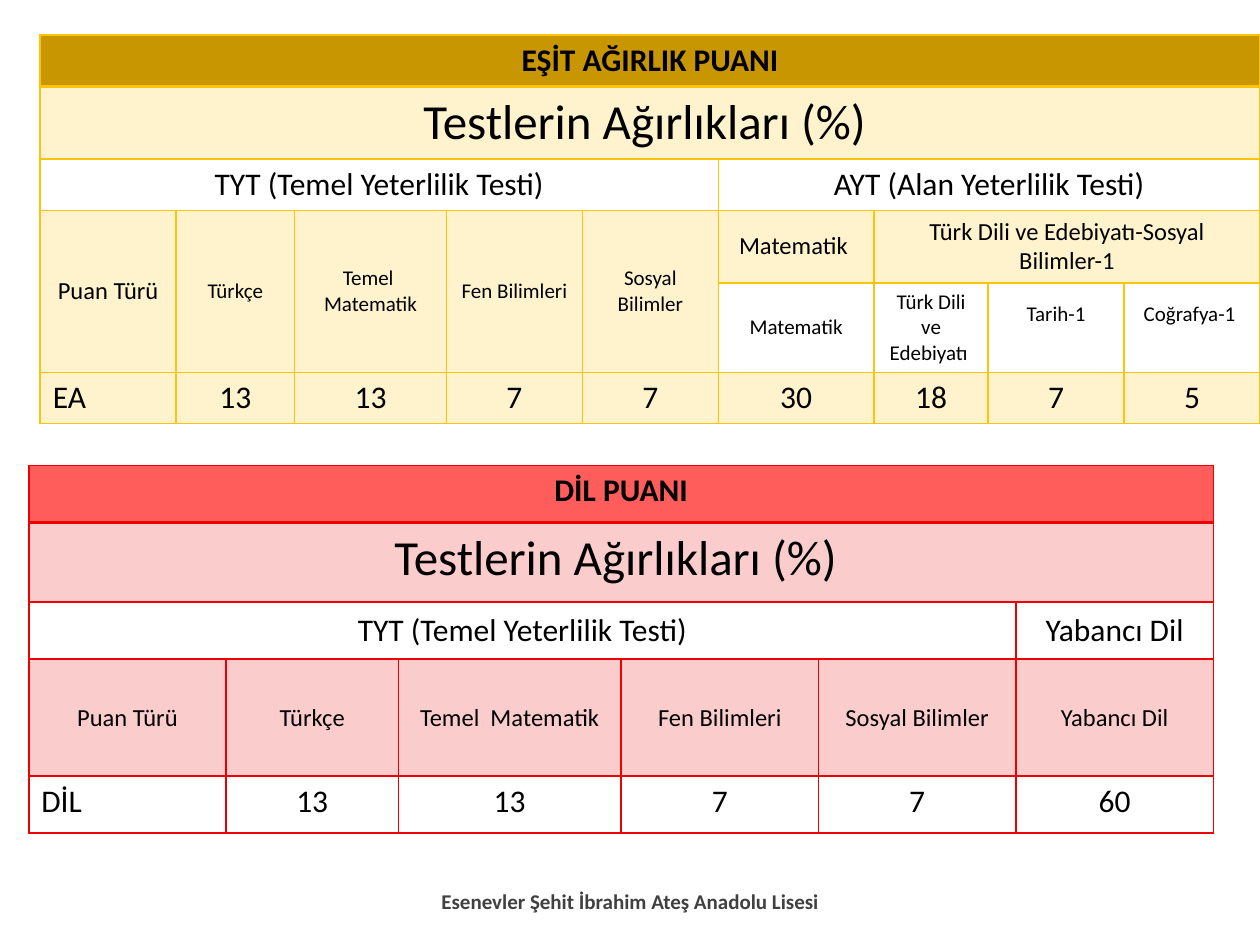
import dataclasses
import typing

import lxml.etree
import pptx
import pptx.dml.color
import pptx.enum.text
import pptx.oxml.ns
import pptx.util

Cm = pptx.util.Cm
Align = pptx.enum.text.PP_ALIGN
Anchor = pptx.enum.text.MSO_ANCHOR


@dataclasses.dataclass(frozen=True)
class Theme:
    font: str = "Calibri"
    text: str = "000000"
    footer: str = "404040"
    gold: str = "FFC30B"
    gold_dark: str = "C89600"
    red: str = "EF0000"
    red_light: str = "FF5C5C"
    tint_percent: int = 20
    title_size: int = 28
    heading_size: int = 18
    label_size: int = 14
    small_size: int = 12
    line: int = 1
    header_line: int = 2


THEME = Theme()


@dataclasses.dataclass(frozen=True)
class CellSpec:
    row: int
    column: int
    text: str
    size: int
    tinted: bool = False
    rows: int = 1
    columns: int = 1
    anchor: typing.Any = Anchor.MIDDLE
    align: typing.Any = Align.CENTER
    bold: bool = False
    bottom_margin: float = 0.13


@dataclasses.dataclass(frozen=True)
class ScoreTable:
    left: float
    top: float
    widths: list[float]
    heights: list[float]
    header_color: str
    accent: str
    cells: list[CellSpec]


def title_cells(title: str, columns: int) -> list[CellSpec]:
    """The header, the subtitle and the first test group, shared by both tables."""
    return [
        CellSpec(0, 0, title, THEME.heading_size, columns=columns, anchor=Anchor.TOP, bold=True),
        CellSpec(1, 0, "Testlerin Ağırlıkları (%) ", THEME.title_size, True,
                 columns=columns, anchor=Anchor.TOP),
        CellSpec(2, 0, "TYT (Temel Yeterlilik Testi)", THEME.heading_size, columns=5),
    ]


def score_cells(row: int, values: list[str], tinted: bool) -> list[CellSpec]:
    return [
        CellSpec(row, column, value, THEME.heading_size, tinted, anchor=Anchor.TOP,
                 align=Align.CENTER if column else Align.LEFT)
        for column, value in enumerate(values)
    ]


def format_text(text_frame: typing.Any, size: int, color: str, bold: bool, align: typing.Any) -> None:
    paragraph = text_frame.paragraphs[0]
    paragraph.alignment = align
    for run in paragraph.runs:
        run.font.name = THEME.font
        run.font.size = pptx.util.Pt(size)
        run.font.bold = bold
        run.font.color.rgb = pptx.dml.color.RGBColor.from_string(color)


def fill_cell(cell: typing.Any, color: str, percent: int = 100) -> None:
    cell.fill.solid()
    cell.fill.fore_color.rgb = pptx.dml.color.RGBColor.from_string(color)
    if percent < 100:
        solid = cell._tc.tcPr.find(pptx.oxml.ns.qn("a:solidFill"))
        lxml.etree.SubElement(solid[0], pptx.oxml.ns.qn("a:alpha"), val=str(percent * 1000))


def set_borders(cell: typing.Any, color: str, row: int) -> None:
    """Draw all four sides; the edge below the header row is heavier."""
    properties = cell._tc.get_or_add_tcPr()
    heavy_side = {0: "lnB", 1: "lnT"}.get(row)
    for position, side in enumerate(("lnL", "lnR", "lnT", "lnB")):
        width = THEME.header_line if side == heavy_side else THEME.line
        line = lxml.etree.Element(pptx.oxml.ns.qn("a:" + side), w=str(pptx.util.Pt(width)))
        solid = lxml.etree.SubElement(line, pptx.oxml.ns.qn("a:solidFill"))
        lxml.etree.SubElement(solid, pptx.oxml.ns.qn("a:srgbClr"), val=color)
        properties.insert(position, line)


def draw_table(slide: typing.Any, spec: ScoreTable) -> None:
    shape = slide.shapes.add_table(
        len(spec.heights), len(spec.widths), Cm(spec.left), Cm(spec.top),
        Cm(sum(spec.widths)), Cm(sum(spec.heights)))
    table = shape.table
    table.first_row = table.horz_banding = False
    for column, width in zip(table.columns, spec.widths):
        column.width = Cm(width)
    for row, height in zip(table.rows, spec.heights):
        row.height = Cm(height)

    # Plain grid, including the cells hidden by merges
    for row_index in range(len(spec.heights)):
        for column_index in range(len(spec.widths)):
            cell = table.cell(row_index, column_index)
            cell.fill.background()
            set_borders(cell, spec.accent, row_index)

    # Contents
    for item in spec.cells:
        cell = table.cell(item.row, item.column)
        if item.rows * item.columns > 1:
            cell.merge(table.cell(item.row + item.rows - 1, item.column + item.columns - 1))
        if item.row == 0:
            fill_cell(cell, spec.header_color)
        elif item.tinted:
            fill_cell(cell, spec.accent, THEME.tint_percent)
        cell.vertical_anchor = item.anchor
        cell.margin_bottom = Cm(item.bottom_margin)
        cell.text_frame.text = item.text
        format_text(cell.text_frame, item.size, THEME.text, item.bold, item.align)


def draw_footer(slide: typing.Any, text: str) -> None:
    box = slide.shapes.add_textbox(Cm(8.41), Cm(17.65), Cm(8.59), Cm(1.02))
    box.text_frame.word_wrap = True
    box.text_frame.vertical_anchor = Anchor.MIDDLE
    box.text_frame.text = text
    format_text(box.text_frame, THEME.small_size, THEME.footer, True, Align.CENTER)


SUBJECTS = ["Puan Türü", "Türkçe", "Temel  Matematik", "Fen Bilimleri", "Sosyal Bilimler"]

LANGUAGE = ScoreTable(
    0.58, 9.38, [3.98, 3.47, 4.49, 3.98, 3.98, 3.98], [1.15, 1.61, 1.15, 2.36, 1.15],
    THEME.red_light, THEME.red,
    title_cells("DİL PUANI", 6)
    + [CellSpec(2, 5, "Yabancı Dil", THEME.heading_size)]
    + [CellSpec(3, column, subject, THEME.label_size, True)
       for column, subject in enumerate(SUBJECTS + ["Yabancı Dil"])]
    + score_cells(4, ["DİL", "13", "13", "7", "7", "60"], False))

EQUAL_WEIGHT = ScoreTable(
    0.81, 0.71, [2.74, 2.39, 3.06, 2.74, 2.74, 3.14, 2.3, 2.74, 2.74],
    [1.03, 1.45, 1.03, 1.45, 1.8, 1.03],
    THEME.gold_dark, THEME.gold,
    title_cells("EŞİT AĞIRLIK PUANI", 9)
    + [CellSpec(2, 5, "AYT (Alan Yeterlilik Testi)", THEME.heading_size, columns=4)]
    + [CellSpec(3, column, subject, THEME.small_size if column else THEME.label_size, True, rows=2)
       for column, subject in enumerate(SUBJECTS)]
    + [
        CellSpec(3, 5, "Matematik ", THEME.label_size, True),
        CellSpec(3, 6, "Türk Dili ve Edebiyatı-Sosyal Bilimler-1", THEME.label_size, True, columns=3),
        CellSpec(4, 5, "Matematik", THEME.small_size),
        CellSpec(4, 6, "Türk Dili ve Edebiyatı ", THEME.small_size),
        CellSpec(4, 7, "Tarih-1", THEME.small_size, bottom_margin=0.65),
        CellSpec(4, 8, "Coğrafya-1 ", THEME.small_size, bottom_margin=0.65),
    ]
    + score_cells(5, ["EA", "13", "13", "7", "7", "30", "18", "7", "5"], True))


def main() -> None:
    presentation = pptx.Presentation()
    presentation.slide_width, presentation.slide_height = Cm(25.4), Cm(19.05)
    slide = presentation.slides.add_slide(presentation.slide_layouts[6])
    for table in (LANGUAGE, EQUAL_WEIGHT):
        draw_table(slide, table)
    draw_footer(slide, "Esenevler Şehit İbrahim Ateş Anadolu Lisesi")
    presentation.save("out.pptx")


if __name__ == "__main__":
    main()
